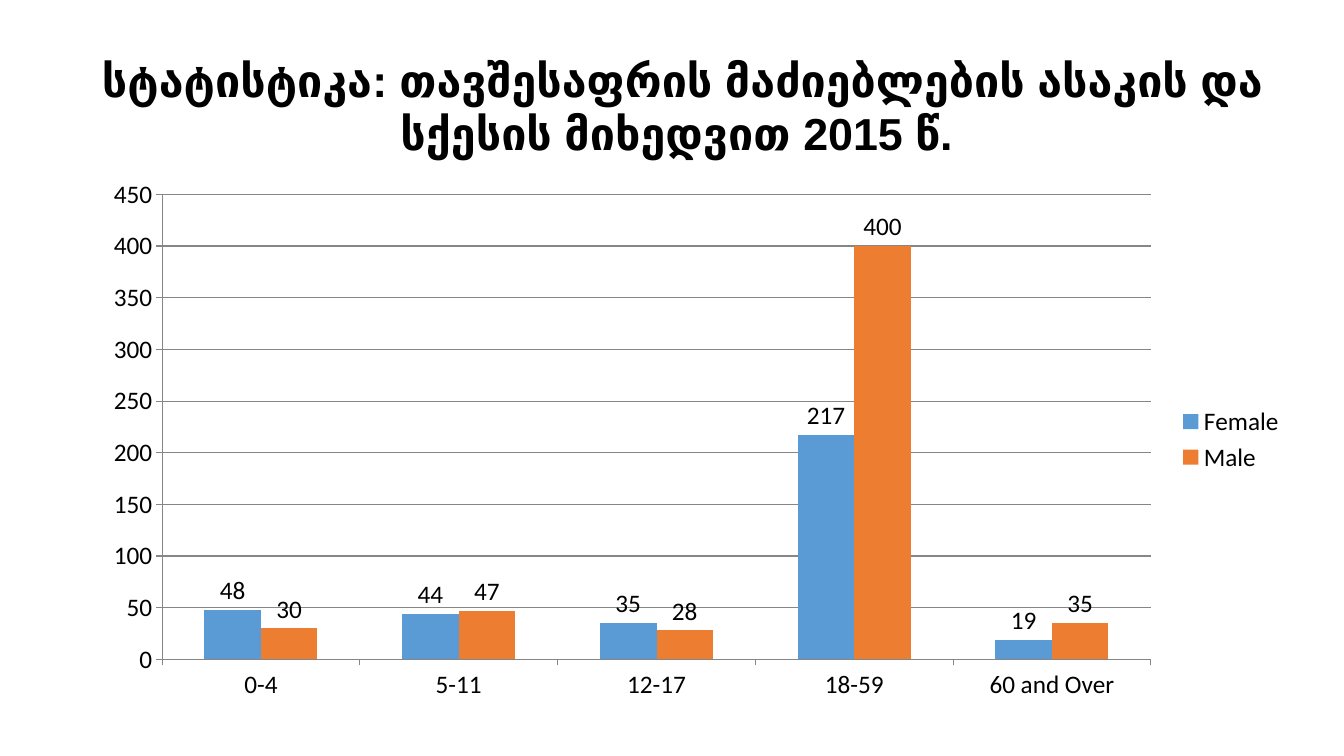
from pptx import Presentation
from pptx.chart.data import CategoryChartData
from pptx.dml.color import RGBColor
from pptx.enum.chart import XL_CHART_TYPE as ChartType
from pptx.enum.chart import XL_LABEL_POSITION as LabelPosition
from pptx.enum.chart import XL_LEGEND_POSITION as LegendPosition
from pptx.enum.chart import XL_TICK_MARK as TickMark
from pptx.enum.text import MSO_ANCHOR, MSO_AUTO_SIZE, PP_ALIGN
from pptx.util import Pt

# Content
TITLE = "სტატისტიკა: თავშესაფრის მაძიებლების ასაკის და სქესის მიხედვით 2015 წ. "
AGE_GROUPS = ["0-4", "5-11", "12-17", "18-59", "60 and Over"]
APPLICANTS = {
    "Female": [48, 44, 35, 217, 19],
    "Male": [30, 47, 28, 400, 35],
}
COLORS = {"Female": "5B9BD5", "Male": "ED7D31", "text": "000000", "line": "868686"}

# Places in points: left, top, width, height
TITLE_BOX = (31.7, 33.8, 912.2, 48.2)
CHART_BOX = (64.1, 120.2, 861.1, 387.4)


def color(name):
    return RGBColor.from_string(COLORS[name])


def points(box):
    return [Pt(length) for length in box]


presentation = Presentation()
presentation.slide_width, presentation.slide_height = Pt(960), Pt(540)
slide = presentation.slides.add_slide(presentation.slide_layouts[5])

# Title
title = slide.shapes.title
title.left, title.top, title.width, title.height = points(TITLE_BOX)
frame = title.text_frame
frame.text = TITLE
frame.word_wrap = True
frame.auto_size = MSO_AUTO_SIZE.NONE
frame.vertical_anchor = MSO_ANCHOR.TOP
paragraph = frame.paragraphs[0]
paragraph.alignment = PP_ALIGN.CENTER
paragraph.font.name = "Arial"
paragraph.font.size = Pt(32)
paragraph.font.bold = True
paragraph.font.color.rgb = color("text")

# Chart
chart_data = CategoryChartData()
chart_data.categories = AGE_GROUPS
for name, values in APPLICANTS.items():
    chart_data.add_series(name, values)
chart = slide.shapes.add_chart(
    ChartType.COLUMN_CLUSTERED, *points(CHART_BOX), chart_data
).chart
chart.has_title = False
chart.font.name = "Calibri"
chart.font.size = Pt(18)
chart.font.color.rgb = color("text")
chart.has_legend = True
chart.legend.position = LegendPosition.RIGHT
chart.legend.include_in_layout = False

# Columns and value labels
plot = chart.plots[0]
plot.vary_by_categories = False
plot.gap_width = 150
plot.overlap = 0
for series in plot.series:
    series.format.fill.solid()
    series.format.fill.fore_color.rgb = color(series.name)
    labels = series.data_labels
    labels.show_value = True
    labels.position = LabelPosition.OUTSIDE_END

# Axes and gridlines
value_axis = chart.value_axis
value_axis.minimum_scale, value_axis.maximum_scale = 0, 450
value_axis.major_unit = 50
value_axis.has_major_gridlines = True
for axis in (chart.category_axis, value_axis):
    axis.major_tick_mark = TickMark.OUTSIDE
for part in (chart.category_axis, value_axis, value_axis.major_gridlines):
    part.format.line.color.rgb = color("line")
    part.format.line.width = Pt(0.75)

presentation.save("out.pptx")
